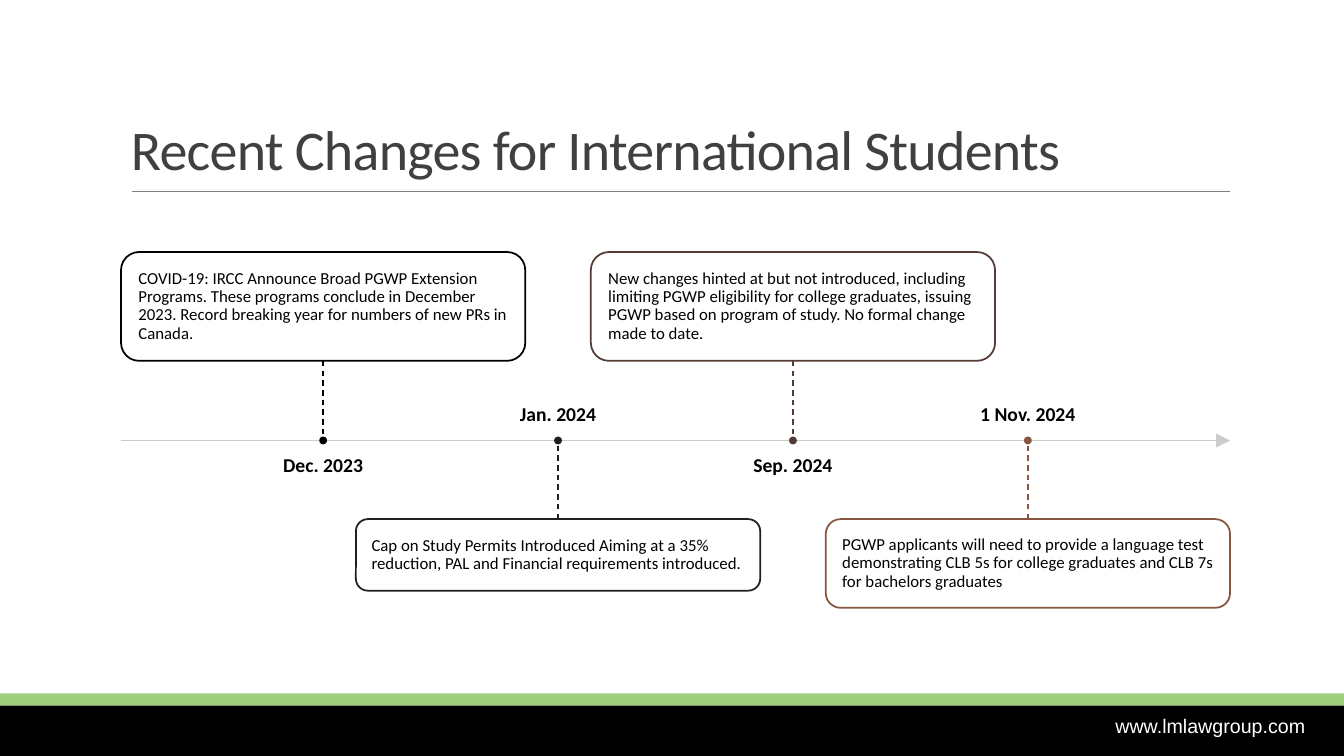
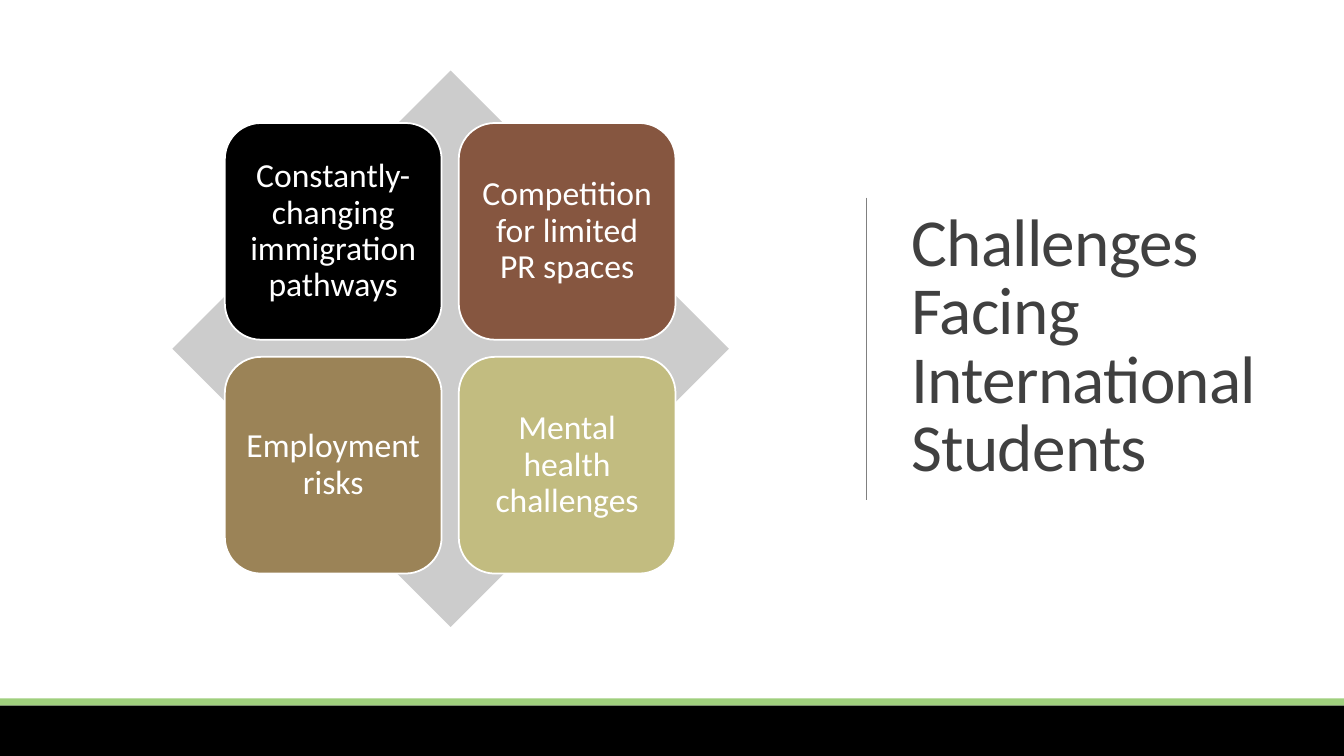
import pptx
import pptx.util
import pptx.dml.color
import pptx.enum.dml
import pptx.enum.shapes
import pptx.enum.text
import pptx.oxml
import pptx.oxml.ns

Inches = pptx.util.Inches
SHAPE = pptx.enum.shapes.MSO_SHAPE
ALIGN = pptx.enum.text.PP_ALIGN
ANCHOR = pptx.enum.text.MSO_ANCHOR

COLORS = {
    "black": "000000",
    "white": "FFFFFF",
    "green": "9FCF7D",
    "title": "404040",
    "rule": "808080",
    "gray": "CCCCCC",
    "charcoal": "231F20",
    "umber": "543B36",
    "brown": "865640",
    "tan": "9B8357",
    "olive": "C2BC80",
}

SLIDE_W, SLIDE_H = 13.33, 7.5
BAND_TOP = 7
AXIS_Y = 4.37
AXIS_LEFT, AXIS_RIGHT = 1.2, 12.2
CARD_W, CARD_STEP = 4.01, 2.33
UPPER_TOP, LOWER_TOP = 2.5, 5.15
DOT = 0.06
LABEL_W, LABEL_H, LABEL_GAP = 3.53, 0.47, 0.15
TILE, TILE_STEP = 2.15, 2.32

MILESTONES = [
    ("Dec. 2023", 1.08, "black",
     "COVID-19: IRCC Announce Broad PGWP Extension Programs. These programs conclude in "
     "December 2023. Record breaking year for numbers of new PRs in Canada."),
    ("Jan. 2024", 0.71, "charcoal",
     "Cap on Study Permits Introduced Aiming at a 35% reduction, PAL and Financial "
     "requirements introduced."),
    ("Sep. 2024", 1.08, "umber",
     "New changes hinted at but not introduced, including limiting PGWP eligibility for "
     "college graduates, issuing PGWP based on program of study. No formal change made to date."),
    ("1 Nov. 2024", 0.88, "brown",
     "PGWP applicants will need to provide a language test demonstrating CLB 5s for college "
     "graduates and CLB 7s for bachelors graduates"),
]

CHALLENGES = [
    ("Constantly-changing immigration pathways", "black"),
    ("Competition for limited PR spaces", "brown"),
    ("Employment risks", "tan"),
    ("Mental health challenges", "olive"),
]


def rgb(name):
    return pptx.dml.color.RGBColor.from_string(COLORS[name])


def write(sp, text, size, color, font="Calibri", bold=False, align=ALIGN.LEFT,
          anchor=ANCHOR.MIDDLE, inset=0.1, spacing=0.9):
    tf = sp.text_frame
    tf.word_wrap = True
    tf.vertical_anchor = anchor
    tf.margin_left = tf.margin_right = tf.margin_top = tf.margin_bottom = Inches(inset)
    p = tf.paragraphs[0]
    p.alignment = align
    p.line_spacing = spacing
    r = p.add_run()
    r.text = text
    r.font.name = font
    r.font.size = pptx.util.Pt(size)
    r.font.bold = bold
    r.font.color.rgb = rgb(color)
    return r


def add_text(s, x, y, w, h, text, size, color, **style):
    sp = s.shapes.add_textbox(Inches(x), Inches(y), Inches(w), Inches(h))
    return write(sp, text, size, color, **style)


def add_shape(s, kind, x, y, w, h, fill, line=None):
    sp = s.shapes.add_shape(kind, Inches(x), Inches(y), Inches(w), Inches(h))
    sp.shadow.inherit = False
    sp.fill.solid()
    sp.fill.fore_color.rgb = rgb(fill)
    if line:
        sp.line.color.rgb = rgb(line)
        sp.line.width = pptx.util.Pt(1.25)
    else:
        sp.line.fill.background()
    return sp


def add_line(s, x1, y1, x2, y2, color, width, dashed=False, arrow=False):
    cn = s.shapes.add_connector(pptx.enum.shapes.MSO_CONNECTOR.STRAIGHT,
                                Inches(x1), Inches(y1), Inches(x2), Inches(y2))
    cn.line.color.rgb = rgb(color)
    cn.line.width = pptx.util.Pt(width)
    if dashed:
        cn.line.dash_style = pptx.enum.dml.MSO_LINE.DASH
    if arrow:
        tail = pptx.oxml.parse_xml(
            '<a:tailEnd %s type="triangle" w="lg" len="lg"/>' % pptx.oxml.ns.nsdecls("a"))
        cn.line._get_or_add_ln().append(tail)
    cn._element.spPr.append(
        pptx.oxml.parse_xml("<a:effectLst %s/>" % pptx.oxml.ns.nsdecls("a")))
    return cn


def add_title(s, x, y, w, h, text, size, anchor):
    r = add_text(s, x, y, w, h, text, size, "title", anchor=anchor, spacing=0.85)
    r.font._element.set("spc", "-50")


def add_bands(s, green_top):
    add_shape(s, SHAPE.RECTANGLE, 0, green_top, SLIDE_W, BAND_TOP - green_top, "green")
    add_shape(s, SHAPE.RECTANGLE, 0, BAND_TOP, SLIDE_W, SLIDE_H - BAND_TOP, "black")


def add_milestone(s, index, date, height, color, text):
    upper = index % 2 == 0
    left = AXIS_LEFT + index * CARD_STEP
    center = left + CARD_W / 2
    card = add_shape(s, SHAPE.ROUNDED_RECTANGLE, left, UPPER_TOP if upper else LOWER_TOP,
                     CARD_W, height, "white", color)
    write(card, text, 12, "black", inset=0.12)
    stem = add_line(s, center, LOWER_TOP, center, AXIS_Y, color, 1, dashed=True)
    stem.begin_connect(card, 2 if upper else 0)
    add_shape(s, SHAPE.OVAL, center - DOT / 2, AXIS_Y - DOT / 2, DOT, DOT, color, color)
    label_top = AXIS_Y + LABEL_GAP if upper else AXIS_Y - LABEL_GAP - LABEL_H
    add_text(s, center - LABEL_W / 2, label_top, LABEL_W, LABEL_H, date, 14, "black",
             bold=True, align=ALIGN.CENTER, inset=0,
             anchor=ANCHOR.TOP if upper else ANCHOR.BOTTOM)


def build_timeline(s):
    add_bands(s, 6.88)
    add_text(s, 10.83, 7.03, 2.35, 0.34, "www.lmlawgroup.com", 14, "white", font="Arial",
             align=ALIGN.CENTER, inset=0.05, spacing=1.0)
    add_line(s, 1.31, 1.9, 12.2, 1.9, "rule", 0.5)
    add_title(s, 1.2, 0.31, 11, 1.59, "Recent Changes for International Students", 40,
              ANCHOR.BOTTOM)
    add_line(s, AXIS_LEFT, AXIS_Y, AXIS_RIGHT, AXIS_Y, "gray", 1.25, arrow=True)
    for i, milestone in enumerate(MILESTONES):
        add_milestone(s, i, *milestone)


def build_challenges(s):
    add_bands(s, 6.93)
    add_title(s, 8.94, 0.69, 3.69, 5.53, "Challenges Facing International Students", 48,
              ANCHOR.MIDDLE)
    add_line(s, 8.59, 1.96, 8.59, 4.96, "rule", 0.5)
    add_shape(s, SHAPE.DIAMOND, 1.71, 0.7, 5.52, 5.52, "gray")
    for i, (text, color) in enumerate(CHALLENGES):
        row, col = divmod(i, 2)
        tile = add_shape(s, SHAPE.ROUNDED_RECTANGLE, 2.23 + col * TILE_STEP,
                         1.22 + row * TILE_STEP, TILE, TILE, color, "white")
        write(tile, text, 24, "white", align=ALIGN.CENTER)


def main():
    prs = pptx.Presentation()
    prs.slide_width = Inches(SLIDE_W)
    prs.slide_height = Inches(SLIDE_H)
    for build in (build_timeline, build_challenges):
        build(prs.slides.add_slide(prs.slide_layouts[6]))
    prs.save("out.pptx")


if __name__ == "__main__":
    main()
